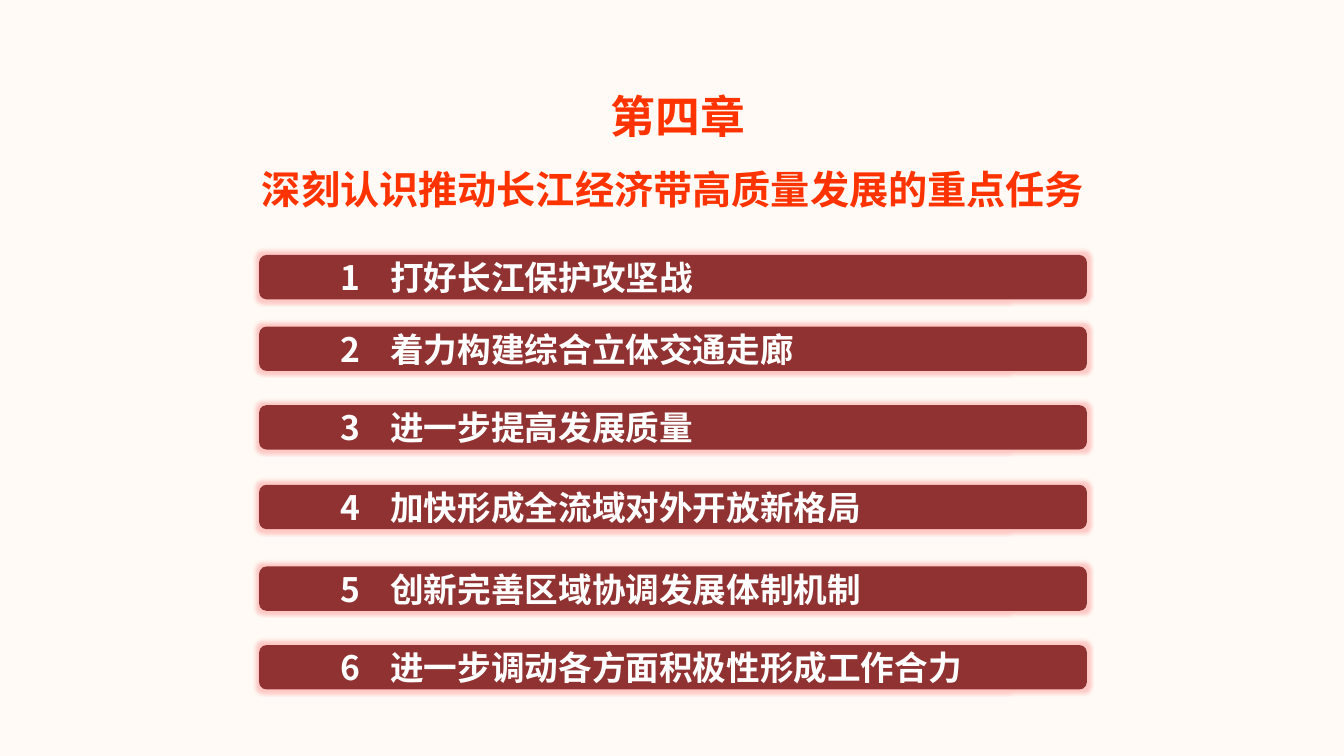
import lxml.etree
import pptx
import pptx.dml.color
import pptx.enum.shapes
import pptx.enum.text
import pptx.oxml
import pptx.oxml.ns
import pptx.util

Inches = pptx.util.Inches
FONT = "Noto Sans CJK SC"
COLORS = {"background": "FFFAF5", "title": "FF3300", "bar": "6C0000",
          "glow": "FF0000", "bar_text": "FFFFFF"}
TITLE_LINES = [(" 第四章", 32), ("深刻认识推动长江经济带高质量发展的重点任务", 28)]
TASKS = [
    (2.53, "打好长江保护攻坚战"),
    (3.24, "着力构建综合立体交通走廊"),
    (4.02, "进一步提高发展质量"),
    (4.81, "加快形成全流域对外开放新格局"),
    (5.62, "创新完善区域协调发展体制机制"),
    (6.4, "进一步调动各方面积极性形成工作合力"),
]


def color(name):
    """Return the named palette colour."""
    return pptx.dml.color.RGBColor.from_string(COLORS[name])


def set_format(target, values):
    """Set every attribute in values on target."""
    for name, value in values.items():
        setattr(target, name, value)


def add_element(parent, tag, **attributes):
    """Append a DrawingML element to parent and return it."""
    element = lxml.etree.SubElement(parent, pptx.oxml.ns.qn(tag))
    for name, value in attributes.items():
        element.set(name, str(value))
    return element


def write_text(paragraph, text, size, color_name):
    """Write one bold run in the slide font."""
    run = paragraph.add_run()
    run.text = text
    set_format(run.font, {"name": FONT, "size": pptx.util.Pt(size), "bold": True})
    run.font.color.rgb = color(color_name)
    add_element(run.font._element, "a:ea", typeface=FONT)


def place_title(slide, left, top, width, height):
    """Fill the title placeholder with the chapter number and name."""
    title = slide.shapes.title
    set_format(title, {"left": Inches(left), "top": Inches(top),
                       "width": Inches(width), "height": Inches(height)})
    frame = title.text_frame
    set_format(frame, {"word_wrap": True,
                       "auto_size": pptx.enum.text.MSO_AUTO_SIZE.NONE,
                       "vertical_anchor": pptx.enum.text.MSO_ANCHOR.MIDDLE})
    for index, (text, size) in enumerate(TITLE_LINES):
        paragraph = frame.add_paragraph() if index else frame.paragraphs[0]
        set_format(paragraph, {"alignment": pptx.enum.text.PP_ALIGN.CENTER,
                               "line_spacing": 1.5,
                               "space_before": pptx.util.Pt(0)})
        write_text(paragraph, text, size, "title")


def add_task_bar(slide, number, text, left, top, width, height):
    """Add a translucent glowing bar with a numbered task."""
    bar = slide.shapes.add_shape(
        pptx.enum.shapes.MSO_SHAPE.ROUNDED_RECTANGLE,
        Inches(left), Inches(top), Inches(width), Inches(height))
    bar.adjustments[0] = 0.167
    bar.fill.solid()
    bar.fill.fore_color.rgb = color("bar")
    bar.line.fill.background()
    bar.shadow.inherit = False
    properties = bar._element.spPr
    fill_color = properties.find(pptx.oxml.ns.qn("a:solidFill"))[0]
    add_element(fill_color, "a:alpha", val=75000)
    effects = properties.find(pptx.oxml.ns.qn("a:effectLst"))
    glow = add_element(effects, "a:glow", rad=Inches(0.07))
    glow_color = add_element(glow, "a:srgbClr", val=COLORS["glow"])
    add_element(glow_color, "a:alpha", val=20000)

    frame = bar.text_frame
    set_format(frame, {"word_wrap": True,
                       "vertical_anchor": pptx.enum.text.MSO_ANCHOR.MIDDLE,
                       "margin_left": Inches(0.79), "margin_right": Inches(0.1),
                       "margin_top": Inches(0.05), "margin_bottom": Inches(0.05)})
    paragraph = frame.paragraphs[0]
    paragraph.alignment = pptx.enum.text.PP_ALIGN.LEFT
    tabs = add_element(paragraph._p.get_or_add_pPr(), "a:tabLst")
    add_element(tabs, "a:tab", pos=Inches(0.49), algn="l")
    write_text(paragraph, f"{number}\t{text}", 24, "bar_text")


def build_chapter_slide(presentation):
    """Build the chapter slide with its title and task bars."""
    slide = presentation.slides.add_slide(presentation.slide_layouts[5])
    slide.background.fill.solid()
    slide.background.fill.fore_color.rgb = color("background")
    place_title(slide, 2.45, 0.55, 8.45, 1.62)
    for number, (top, text) in enumerate(TASKS, start=1):
        add_task_bar(slide, number, text, 2.57, top, 8.21, 0.44)


def main():
    """Create and save the presentation."""
    presentation = pptx.Presentation()
    set_format(presentation, {"slide_width": Inches(13.33),
                              "slide_height": Inches(7.5)})
    build_chapter_slide(presentation)
    presentation.save("out.pptx")


if __name__ == "__main__":
    main()
